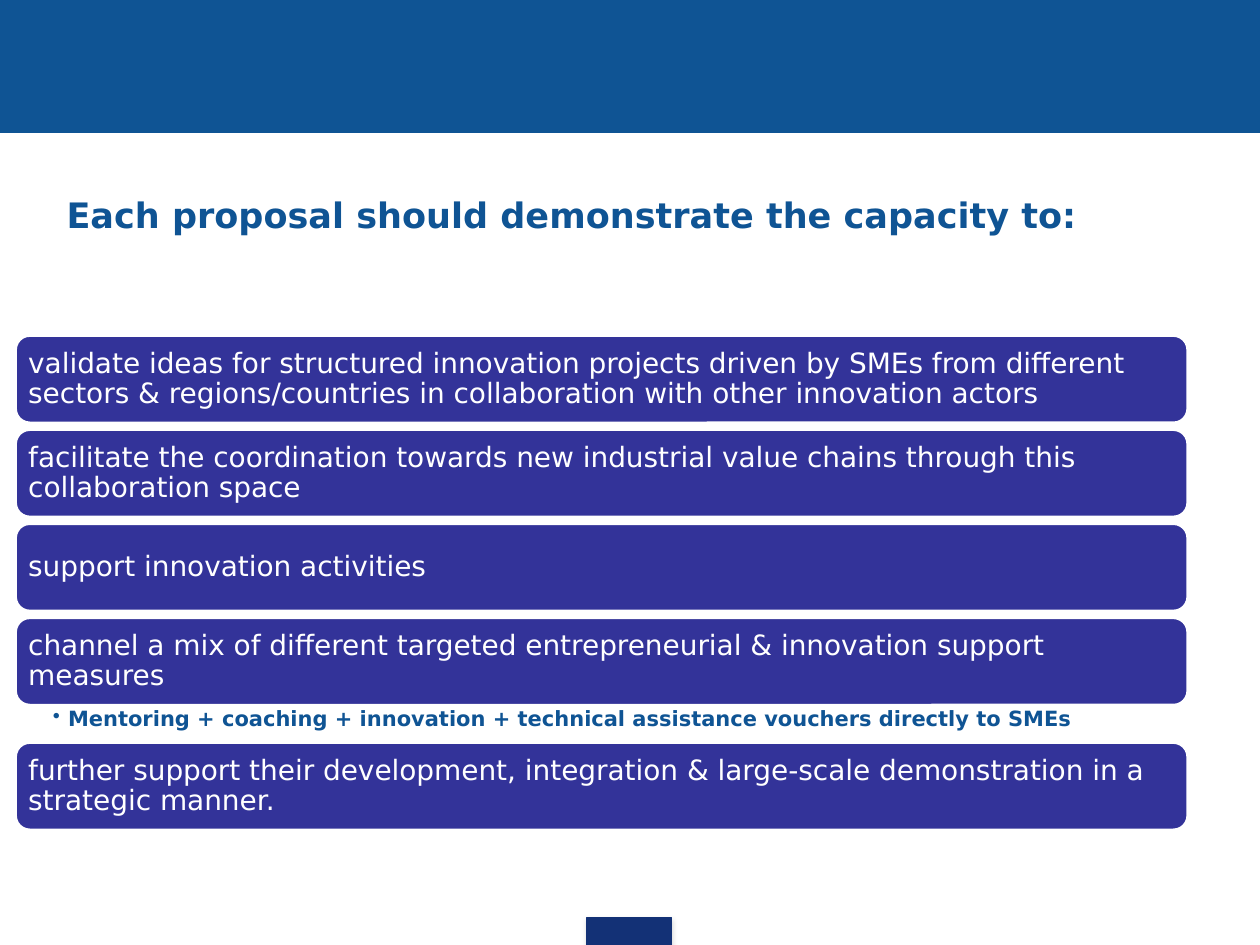
from lxml import etree
from pptx import Presentation
from pptx.dml.color import RGBColor
from pptx.enum import shapes, text
from pptx.oxml import ns
from pptx.util import Inches, Pt

FONT = "DejaVu Sans"
COLORS = {"band": "0F5494", "badge": "133176", "bar": "333399",
          "white": "FFFFFF", "shadow": "808080"}
TITLE = "Each proposal should demonstrate the capacity to:"
CAPACITIES = [
    "validate ideas for structured innovation projects driven by SMEs from different "
    "sectors & regions/countries in collaboration with other innovation actors",
    "facilitate the coordination towards new industrial value chains through this "
    "collaboration space",
    "support innovation activities",
    "channel a mix of different targeted entrepreneurial & innovation support measures",
]
SUPPORT = "Mentoring + coaching + innovation + technical assistance vouchers directly to SMEs"
FOLLOW_UP = ("further support their development, integration & large-scale demonstration "
             "in a strategic manner.")


def color(name):
    return RGBColor.from_string(COLORS[name])


def add_panel(slide, kind, box, fill, line, line_width):
    panel = slide.shapes.add_shape(kind, *map(Inches, box))
    panel.shadow.inherit = False
    panel.fill.solid()
    panel.fill.fore_color.rgb = color(fill)
    panel.line.color.rgb = color(line)
    panel.line.width = Pt(line_width)
    return panel


def write(holder, words, ink, size, insets, anchor, bold=False, spacing=1.0, bullet=None):
    """Fill a shape with one left-aligned paragraph; insets run left, top, right, bottom."""
    frame = holder.text_frame
    layout = {"word_wrap": True, "vertical_anchor": anchor}
    for side, inset in zip(("left", "top", "right", "bottom"), insets):
        layout["margin_" + side] = Inches(inset)
    for name, value in layout.items():
        setattr(frame, name, value)
    paragraph = frame.paragraphs[0]
    paragraph.text = words
    paragraph.alignment = text.PP_ALIGN.LEFT
    paragraph.line_spacing = spacing
    if bullet:
        hanging = Inches(0.12)
        properties = paragraph._p.get_or_add_pPr()
        properties.set("marL", str(hanging))
        properties.set("indent", str(-hanging))
        etree.SubElement(properties, ns.qn("a:buChar")).set("char", bullet)
    font = paragraph.runs[0].font
    for name, value in {"name": FONT, "size": Pt(size), "bold": bold}.items():
        setattr(font, name, value)
    font.color.rgb = color(ink)


def add_soft_shadow(panel):
    effects = panel._element.spPr.find(ns.qn("a:effectLst"))
    shadow = etree.SubElement(effects, ns.qn("a:outerShdw"), blurRad=str(Pt(3.1)),
                              dist=str(Pt(1.8)), dir="5400000", rotWithShape="0")
    tint = etree.SubElement(shadow, ns.qn("a:srgbClr"), val=COLORS["shadow"])
    etree.SubElement(tint, ns.qn("a:alpha"), val="35000")


def add_frame(slide, width, height):
    """Add the band at the top and the badge at the foot."""
    rectangle = shapes.MSO_SHAPE.RECTANGLE
    add_panel(slide, rectangle, (0, 0, width, 1.05), "band", "band", 0.75)
    badge = add_panel(slide, rectangle, (4.66, height - 0.22, 0.67, 0.22),
                      "badge", "badge", 0.75)
    add_soft_shadow(badge)


def add_title(slide, box):
    title = slide.shapes.add_textbox(*map(Inches, box))
    write(title, TITLE, "band", 20, (0.1, 0.05, 0.1, 0.05),
          text.MSO_ANCHOR.MIDDLE, bold=True)


def add_capacity_list(slide, left, top, width):
    bar_height, pitch, detail_height = 0.7, 2.24 / 3, 0.29

    def add_bar(words, bar_top):
        bar = add_panel(slide, shapes.MSO_SHAPE.ROUNDED_RECTANGLE,
                        (left, bar_top, width, bar_height), "bar", "white", 2)
        write(bar, words, "white", 16, (0.07,) * 4, text.MSO_ANCHOR.MIDDLE, spacing=0.9)

    for row, words in enumerate(CAPACITIES):
        add_bar(words, top + row * pitch)

    detail_top = top + (len(CAPACITIES) - 1) * pitch + bar_height
    detail = slide.shapes.add_textbox(
        *map(Inches, (left, detail_top, width, detail_height)))
    write(detail, SUPPORT, "band", 12, (0.3, 0.02, 0.12, 0.02),
          text.MSO_ANCHOR.TOP, bold=True, spacing=0.9, bullet="•")
    add_bar(FOLLOW_UP, detail_top + detail_height)


def main():
    width, height = 10, 7.5
    deck = Presentation()
    deck.slide_width, deck.slide_height = Inches(width), Inches(height)
    slide = deck.slides.add_slide(deck.slide_layouts[6])
    add_frame(slide, width, height)
    add_title(slide, (0.43, 1.47, 9, 0.47))
    add_capacity_list(slide, 0.12, 2.66, 9.31)
    deck.save("out.pptx")


if __name__ == "__main__":
    main()
